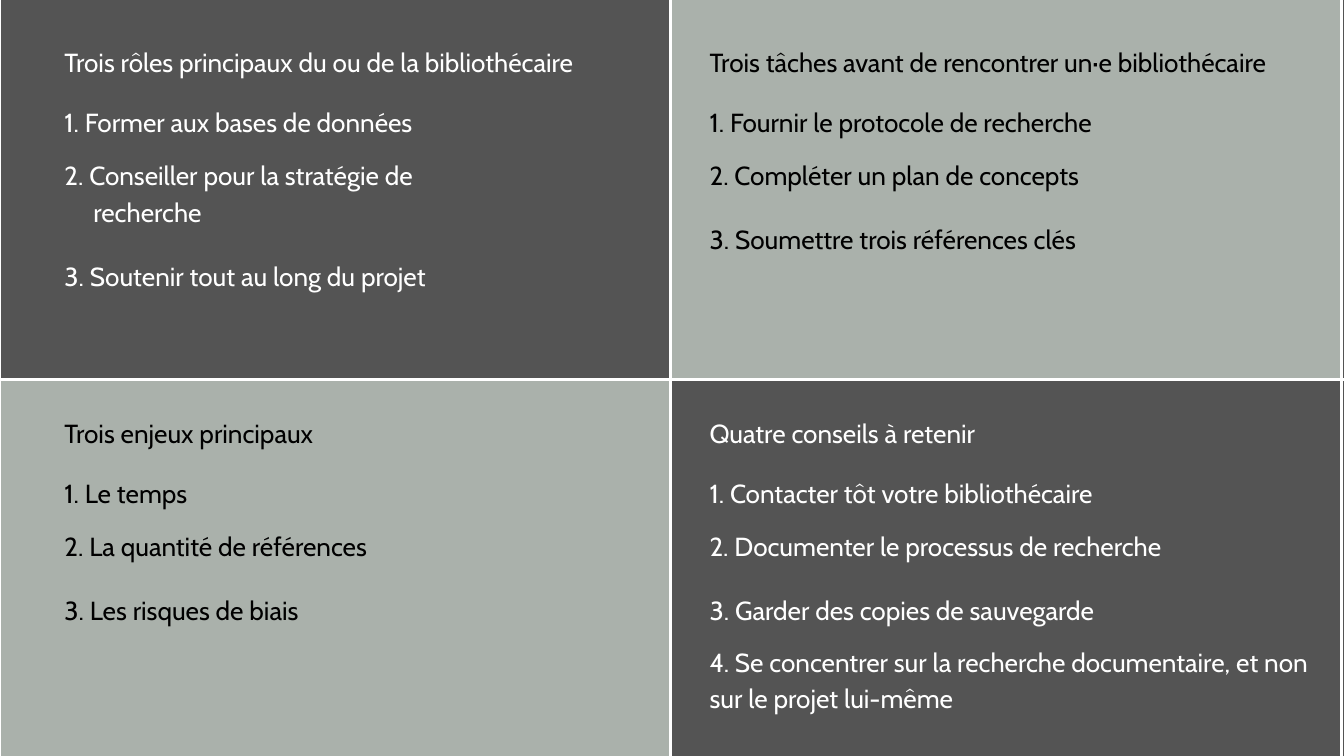
from pptx import Presentation
from pptx import util as u
from pptx.dml import color
from pptx.enum import shapes, text
from pptx.oxml import ns
from lxml import etree

DARK, SAGE, WHITE, BLACK = "545454", "AAB1AB", "FFFFFF", "000000"
PANEL_WIDTH, PANEL_HEIGHT, PANEL_TOP = 9.98, 5.75, -0.1
MIDDLE = PANEL_TOP + PANEL_HEIGHT
ITEM_LINES = (50.4, 39.2, 50.4, 38.1)

QUADRANTS = [
    (0, 0, DARK, WHITE, 8.43, 4.14, "Trois rôles principaux du ou de la bibliothécaire",
     ["Former aux bases de données",
      "Conseiller pour la stratégie de\vrecherche",
      "Soutenir tout au long du projet"]),
    (0, 1, SAGE, BLACK, 5.37, 3.05, "Trois enjeux principaux",
     ["Le temps", "La quantité de références", "Les risques de biais"]),
    (1, 0, SAGE, BLACK, 8.31, 3.59, "Trois tâches avant de rencontrer un·e bibliothécaire",
     ["Fournir le protocole de recherche",
      "Compléter un plan de concepts",
      "Soumettre trois références clés"]),
    (1, 1, DARK, WHITE, 8.94, 4.42, "Quatre conseils à retenir",
     ["Contacter tôt votre bibliothécaire",
      "Documenter le processus de recherche",
      "Garder des copies de sauvegarde",
      "Se concentrer sur la recherche documentaire, et non sur le projet lui-même"]),
]


def rgb(value):
    """Turn a hex string into a colour."""
    return color.RGBColor.from_string(value)


class QuadrantSlide:
    """Draw the elements of a slide in one shared style."""

    font_name, font_size, line_width = "Cabin", u.Pt(28), u.Pt(3)

    def __init__(self, presentation):
        """Add a blank slide with a dark background."""
        self.slide = presentation.slides.add_slide(presentation.slide_layouts[6])
        self.slide.background.fill.solid()
        self.slide.background.fill.fore_color.rgb = rgb(DARK)

    def outline(self, shape):
        """Give a shape the white line."""
        shape.line.color.rgb = rgb(WHITE)
        shape.line.width = self.line_width

    def divider(self, *ends):
        """Draw a straight line between two points."""
        connector = self.slide.shapes.add_connector(
            shapes.MSO_CONNECTOR.STRAIGHT, *map(u.Inches, ends))
        self.outline(connector)
        etree.SubElement(connector._element.spPr, ns.qn("a:effectLst"))

    def panel(self, left, top, fill):
        """Draw one coloured quarter."""
        shape = self.slide.shapes.add_shape(
            shapes.MSO_SHAPE.RECTANGLE,
            *map(u.Inches, (left, top, PANEL_WIDTH, PANEL_HEIGHT)))
        shape.shadow.inherit = False
        shape.fill.solid()
        shape.fill.fore_color.rgb = rgb(fill)
        self.outline(shape)

    def numbered_list(self, box, heading, items, ink):
        """Set a heading and its numbered items."""
        frame = self.slide.shapes.add_textbox(*map(u.Inches, box)).text_frame
        frame.word_wrap = True
        frame.auto_size = text.MSO_AUTO_SIZE.SHAPE_TO_FIT_TEXT
        frame.margin_left = frame.margin_right = frame.margin_top = frame.margin_bottom = 0
        self.fill_paragraph(frame.paragraphs[0], heading, 39.2, 0, ink)
        for number, (item, line) in enumerate(zip(items, ITEM_LINES), 1):
            self.fill_paragraph(frame.add_paragraph(), f"{number}. {item}", line,
                                14 if number == 1 else 18, ink)

    def fill_paragraph(self, paragraph, words, line, before, ink):
        """Fill a paragraph, hanging its lines after a break."""
        paragraph.text = words
        paragraph.line_spacing = u.Pt(line)
        paragraph.space_before = u.Pt(before)
        paragraph.font.name = self.font_name
        paragraph.font.size = self.font_size
        paragraph.font.color.rgb = rgb(ink)
        if "\v" in words:
            properties = paragraph._p.get_or_add_pPr()
            properties.set("marL", str(u.Inches(0.43)))
            properties.set("indent", str(-u.Inches(0.43)))


def main():
    """Build and save the four-quarter summary."""
    presentation = Presentation()
    presentation.slide_width, presentation.slide_height = u.Inches(20), u.Inches(11.25)
    summary = QuadrantSlide(presentation)
    summary.divider(0, MIDDLE, 20, MIDDLE)
    summary.divider(PANEL_WIDTH, 0, PANEL_WIDTH, 11.25)
    for column, row, fill, *_ in QUADRANTS:
        summary.panel(column * PANEL_WIDTH, PANEL_TOP + row * PANEL_HEIGHT, fill)
    for column, row, _, ink, width, height, heading, items in QUADRANTS:
        box = (0.96 + column * 9.6, 0.61 + row * 5.52, width, height)
        summary.numbered_list(box, heading, items, ink)
    presentation.save("out.pptx")


if __name__ == "__main__":
    main()
